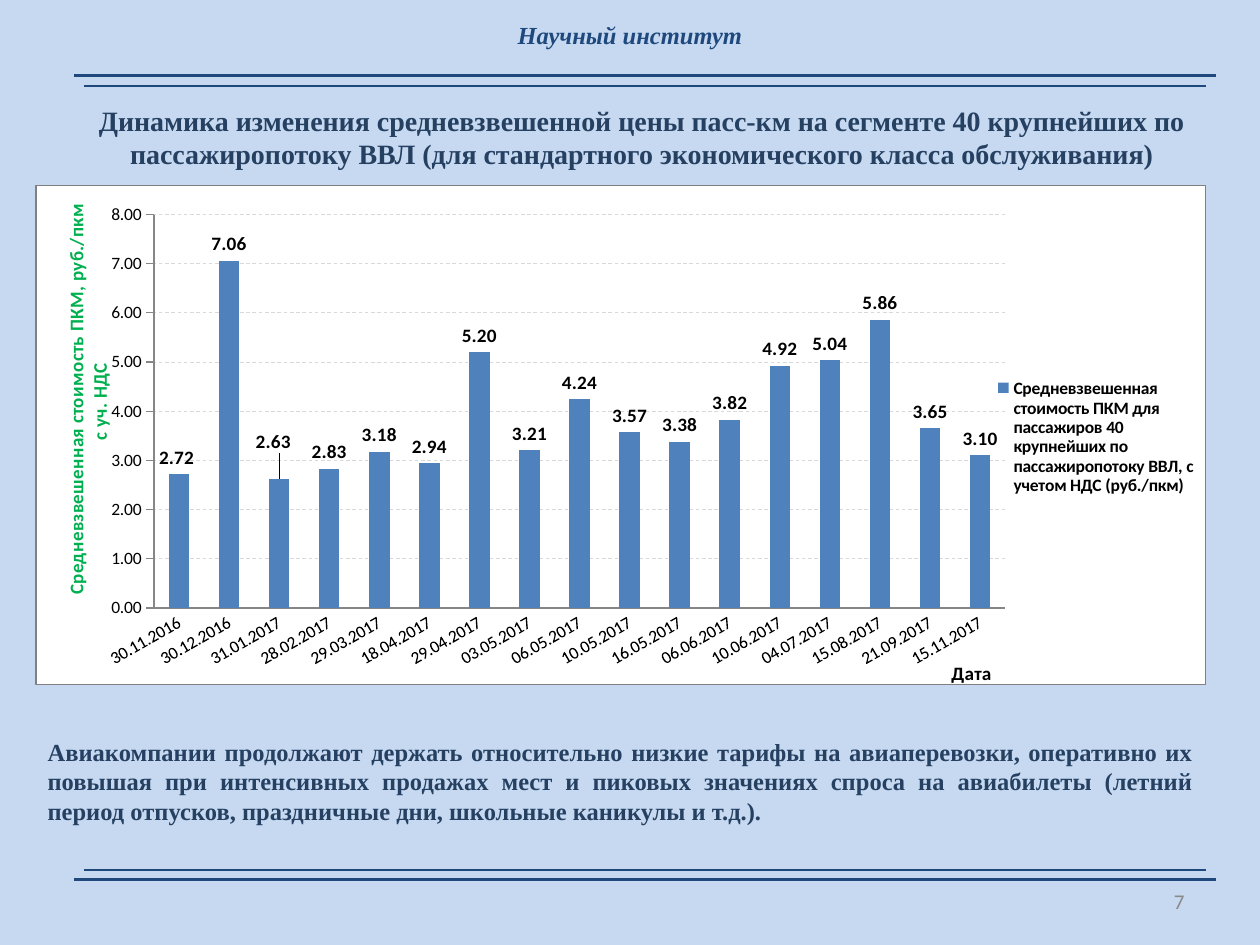
from lxml.etree import SubElement
from pptx import Presentation
from pptx.chart.data import CategoryChartData
from pptx.dml.color import RGBColor
from pptx.enum.chart import XL_CHART_TYPE, XL_LABEL_POSITION, XL_LEGEND_POSITION, XL_TICK_MARK
from pptx.enum.dml import MSO_LINE
from pptx.enum.shapes import MSO_CONNECTOR
from pptx.enum.text import MSO_ANCHOR, PP_ALIGN
from pptx.oxml import parse_xml
from pptx.oxml.ns import nsdecls, qn
from pptx.util import Cm, Pt

rgb = RGBColor.from_string
NAVY, DARK = "1F497D", "254061"
NUMBER = "#,##0.00"

prs = Presentation()
prs.slide_width, prs.slide_height = Cm(25.4), Cm(19.05)
s = prs.slides.add_slide(prs.slide_layouts[6])
s.background.fill.solid()
s.background.fill.fore_color.rgb = rgb("C6D9F1")


def add_text(text, x, y, w, h, *, size, color=DARK, font="Times New Roman",
             bold=True, italic=False, align=PP_ALIGN.CENTER, anchor=MSO_ANCHOR.TOP):
    tf = s.shapes.add_textbox(Cm(x), Cm(y), Cm(w), Cm(h)).text_frame
    tf.word_wrap = True
    tf.vertical_anchor = anchor
    p = tf.paragraphs[0]
    p.alignment = align
    r = p.add_run()
    r.text = text
    r.font.name, r.font.size = font, Pt(size)
    r.font.bold, r.font.italic = bold, italic
    r.font.color.rgb = rgb(color)


def set_layout(after, **values):
    """Place a chart part by hand; the layout goes right after the given element."""
    parent = after.getparent()
    for old in parent.findall(qn("c:layout")):
        parent.remove(old)
    layout = parse_xml(f"<c:layout {nsdecls('c')}><c:manualLayout/></c:layout>")
    for name, value in values.items():
        SubElement(layout[0], qn(f"c:{name}")).set("val", str(value))
    after.addnext(layout)


# Header, page number and double rules
add_text("7", 18.21, 17.65, 5.92, 1.02, size=12, color="898989", font="Calibri",
         bold=False, align=PP_ALIGN.RIGHT, anchor=MSO_ANCHOR.MIDDLE)
add_text("Научный институт", 0, 0.3, 25.4, 0.81, size=14, color=NAVY,
         italic=True, anchor=MSO_ANCHOR.MIDDLE)
for thick_y, thin_y in ((17.73, 17.53), (1.52, 1.73)):
    group = s.shapes.add_group_shape()
    for x1, x2, y, width in ((1.5, 24.51, thick_y, 2), (1.7, 24.31, thin_y, 1.25)):
        line = group.shapes.add_connector(MSO_CONNECTOR.STRAIGHT, Cm(x1), Cm(y), Cm(x2), Cm(y))
        line.line.color.rgb = rgb(NAVY)
        line.line.width = Pt(width)
        SubElement(line._element.spPr, qn("a:effectLst"))

# Title and conclusion
add_text("Динамика изменения средневзвешенной цены пасс-км на сегменте 40 крупнейших по "
         "пассажиропотоку ВВЛ (для стандартного экономического класса обслуживания)",
         1.14, 1.96, 23.6, 1.63, size=16)
add_text("Авиакомпании продолжают держать относительно низкие тарифы на авиаперевозки, "
         "оперативно их повышая при интенсивных продажах мест и пиковых значениях спроса "
         "на авиабилеты (летний период отпусков, праздничные дни, школьные каникулы и т.д.).",
         0.71, 14.73, 23.6, 2.06, size=14, align=PP_ALIGN.JUSTIFY)

# Price chart
prices = {
    "30.11.2016": 2.72, "30.12.2016": 7.06, "31.01.2017": 2.63, "28.02.2017": 2.83,
    "29.03.2017": 3.18, "18.04.2017": 2.94, "29.04.2017": 5.20, "03.05.2017": 3.21,
    "06.05.2017": 4.24, "10.05.2017": 3.57, "16.05.2017": 3.38, "06.06.2017": 3.82,
    "10.06.2017": 4.92, "04.07.2017": 5.04, "15.08.2017": 5.86, "21.09.2017": 3.65,
    "15.11.2017": 3.10,
}
data = CategoryChartData(number_format=NUMBER)
data.categories = list(prices)
data.add_series("Средневзвешенная стоимость ПКМ для пассажиров 40 крупнейших по "
                "пассажиропотоку ВВЛ, с учетом НДС (руб./пкм)", list(prices.values()))
chart = s.shapes.add_chart(XL_CHART_TYPE.COLUMN_CLUSTERED, Cm(0.71), Cm(3.73),
                           Cm(23.6), Cm(10.21), data).chart
chart.has_title = False
chart.font.name, chart.font.size = "Calibri", Pt(10)
chart.font.color.rgb = rgb("000000")
chart._chartSpace.find(qn("c:txPr")).addprevious(parse_xml(
    f'<c:spPr {nsdecls("c", "a")}><a:solidFill><a:srgbClr val="FFFFFF"/></a:solidFill>'
    '<a:ln w="9525"><a:solidFill><a:srgbClr val="808080"/></a:solidFill></a:ln></c:spPr>'))

plot_area = chart._chartSpace.chart.plotArea
if plot_area.find(qn("c:layout")) is None:
    plot_area.insert(0, parse_xml(f"<c:layout {nsdecls('c')}/>"))
anchor = parse_xml(f"<c:layout {nsdecls('c')}/>")
plot_area.insert(0, anchor)
set_layout_values = dict(layoutTarget="inner", xMode="edge", yMode="edge",
                         x=0.101, y=0.058, w=0.728, h=0.789)
for old in plot_area.findall(qn("c:layout"))[1:]:
    plot_area.remove(old)
manual = SubElement(anchor, qn("c:manualLayout"))
for name, value in set_layout_values.items():
    SubElement(manual, qn(f"c:{name}")).set("val", str(value))

plot = chart.plots[0]
plot.gap_width, plot.overlap, plot.vary_by_categories = 143, 65, False
series = plot.series[0]
series.format.fill.solid()
series.format.fill.fore_color.rgb = rgb("4F81BD")
labels = series.data_labels
labels.show_value = True
labels.number_format, labels.number_format_is_linked = NUMBER, False
labels.position = XL_LABEL_POSITION.OUTSIDE_END
labels.font.size, labels.font.bold = Pt(11), True

# Two labels are nudged off their bars
for i, dx, dy in ((0, -0.002, 0), (2, -0.005, -0.04)):
    label = series.points[i].data_label
    label.font.size, label.font.bold = Pt(11), True
    label.position = XL_LABEL_POSITION.OUTSIDE_END
    idx = labels._element.xpath(f"c:dLbl/c:idx[@val='{i}']")[0]
    idx.addnext(parse_xml(f'<c:numFmt {nsdecls("c")} formatCode="{NUMBER}" sourceLinked="0"/>'))
    set_layout(idx, x=dx, y=dy)

# Axes
cat, val = chart.category_axis, chart.value_axis
cat.major_tick_mark, val.major_tick_mark = XL_TICK_MARK.NONE, XL_TICK_MARK.OUTSIDE
val.minimum_scale, val.maximum_scale, val.major_unit = 0, 8, 1
val.tick_labels.number_format, val.tick_labels.number_format_is_linked = NUMBER, False
grid = val.major_gridlines.format.line
grid.color.rgb, grid.width, grid.dash_style = rgb("D9D9D9"), Pt(0.5), MSO_LINE.DASH
cat.tick_labels.font.size = Pt(10)
cat._element.find(qn("c:txPr")).find(qn("a:bodyPr")).set("rot", "-1800000")

for axis, text, color, rotation, x, y in (
        (cat, "Дата", "000000", 0, 0.78, 0.945),
        (val, "Средневзвешенная стоимость ПКМ, руб./пкм с уч. НДС", "00B050", -90, 0.02, 0.04)):
    axis.format.line.color.rgb = rgb("868686")
    tf = axis.axis_title.text_frame
    tf._txBody.find(qn("a:bodyPr")).set("rot", str(rotation * 60000))
    r = tf.paragraphs[0].add_run()
    r.text = text
    r.font.name, r.font.size, r.font.bold = "Calibri", Pt(11), True
    r.font.color.rgb = rgb(color)
    set_layout(axis.axis_title._element.find(qn("c:tx")), xMode="edge", yMode="edge", x=x, y=y)

# Legend
chart.has_legend = True
legend = chart.legend
legend.position = XL_LEGEND_POSITION.RIGHT
legend.include_in_layout = False
legend.font.name, legend.font.size, legend.font.bold = "Calibri", Pt(10), True
set_layout(legend._element.find(qn("c:legendPos")), xMode="edge", yMode="edge",
           x=0.83, y=0.36, w=0.17, h=0.29)

prs.save("out.pptx")
